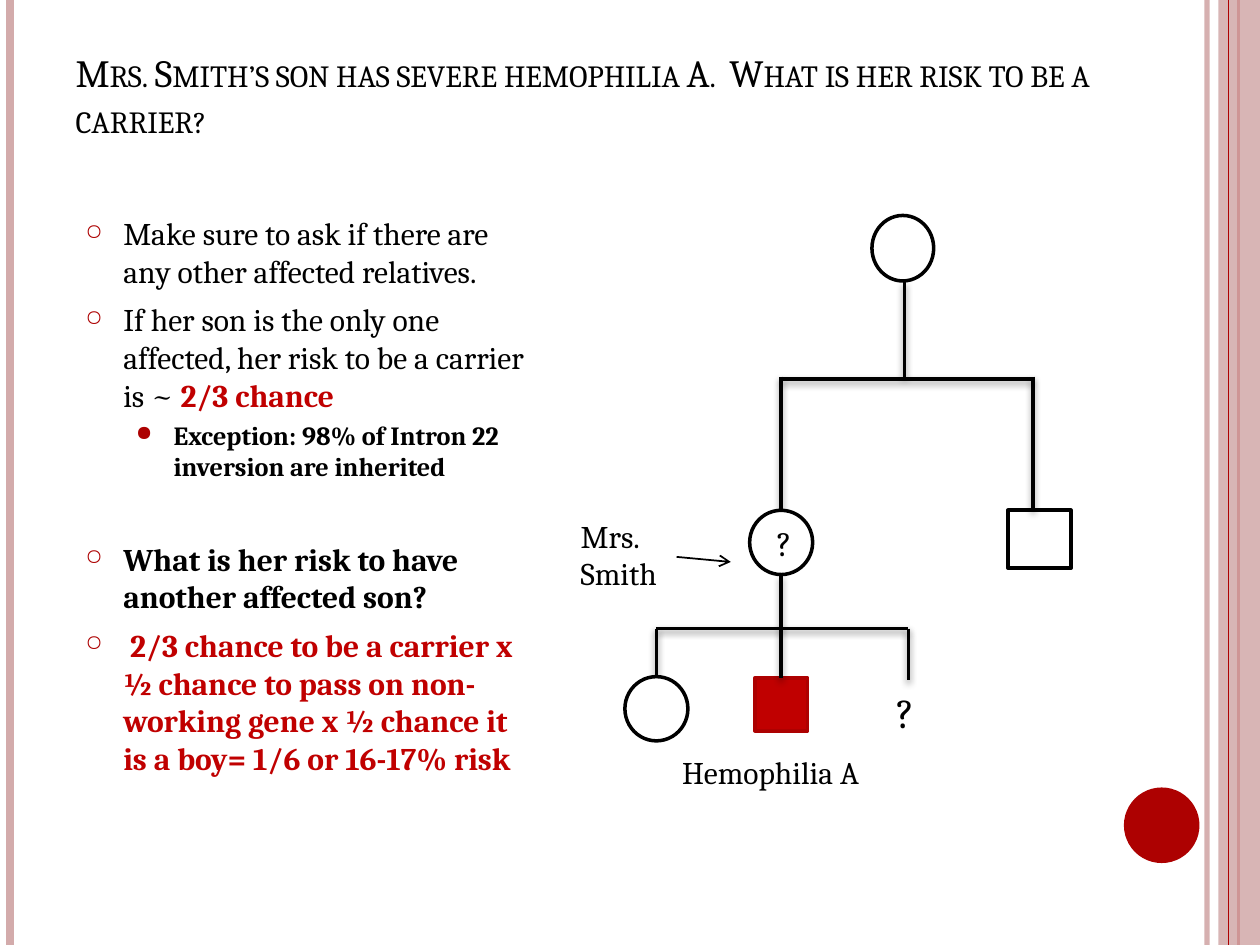
from lxml.etree import SubElement
from pptx import Presentation
from pptx.dml.color import RGBColor
from pptx.enum.shapes import MSO_CONNECTOR, MSO_SHAPE
from pptx.enum.text import MSO_ANCHOR, MSO_AUTO_SIZE, PP_ALIGN
from pptx.oxml.ns import qn
from pptx.util import Inches, Pt

COLORS = {"ink": "000000", "paper": "FFFFFF", "red": "C00000",
          "accent": "AD0101", "rose": "D3ABAB"}
COLUMNS, ROWS = 100, 75


class PedigreeSlide:
    """Draws styled elements on one slide, placed on a 100 by 75 grid."""

    def __init__(self, deck):
        self.font = "Cambria"
        self.column = deck.slide_width / COLUMNS
        self.row = deck.slide_height / ROWS
        self.slide = deck.slides.add_slide(deck.slide_layouts[5])

    def box(self, left, top, width, height):
        return (round(left * self.column), round(top * self.row),
                round(width * self.column), round(height * self.row))

    def color(self, name):
        return RGBColor.from_string(COLORS[name])

    def alpha(self, parent, percent):
        SubElement(parent, qn("a:alpha"), val=str(percent * 1000))

    def style(self, run, size, color="ink", bold=False):
        run.font.name, run.font.size, run.font.bold = self.font, Pt(size), bold
        run.font.color.rgb = self.color(color)

    def title(self, text, area, size):
        title = self.slide.shapes.title
        title.left, title.top, title.width, title.height = self.box(*area)
        frame = title.text_frame
        frame.text = text
        frame.auto_size = MSO_AUTO_SIZE.NONE
        frame.vertical_anchor = MSO_ANCHOR.BOTTOM
        heading = frame.paragraphs[0]
        heading.alignment = PP_ALIGN.LEFT
        self.style(heading.runs[0], size)
        heading.runs[0]._r.get_or_add_rPr().set("cap", "small")

    def text_frame(self, area):
        frame = self.slide.shapes.add_textbox(*self.box(*area)).text_frame
        frame.word_wrap = True
        return frame

    def label(self, text, area, size=18, align=PP_ALIGN.CENTER):
        frame = self.text_frame(area)
        frame.text = text
        frame.paragraphs[0].alignment = align
        self.style(frame.paragraphs[0].runs[0], size)

    def bullet(self, paragraph, symbol, indent, scale):
        properties = paragraph._p.get_or_add_pPr()
        properties.set("marL", str(Inches(indent)))
        properties.set("indent", str(-Inches(0.3)))
        tint = SubElement(properties, qn("a:buClr"))
        SubElement(tint, qn("a:srgbClr"), val=COLORS["accent"])
        SubElement(properties, qn("a:buSzPct"), val=str(scale * 1000))
        SubElement(properties, qn("a:buChar"), char=symbol)

    def bullets(self, area, items):
        frame = self.text_frame(area)
        for index, (level, gap, parts) in enumerate(items):
            paragraph = frame.add_paragraph() if index else frame.paragraphs[0]
            paragraph.level, paragraph.space_before = level, Pt(gap)
            self.bullet(paragraph, *(("○", 0.3, 70), ("●", 0.7, 80))[level])
            for text, color, bold in parts:
                run = paragraph.add_run()
                run.text = text
                self.style(run, (18, 15)[level], color, bold)

    def shape(self, kind, area, fill=None, line=None, opacity=100):
        shape = self.slide.shapes.add_shape(kind, *self.box(*area))
        shape.shadow.inherit = False
        if fill:
            shape.fill.solid()
            shape.fill.fore_color.rgb = self.color(fill)
            if opacity < 100:
                self.alpha(next(shape._element.spPr.iter(qn("a:srgbClr"))), opacity)
        else:
            shape.fill.background()
        if line:
            shape.line.color.rgb = self.color(line)
            shape.line.width = Pt(2)
        else:
            shape.line.fill.background()
        return shape

    def line(self, start, end, color="ink", width=2, opacity=100,
             shadow=False, arrow=False):
        ends = self.box(*start, *end)
        line = self.slide.shapes.add_connector(MSO_CONNECTOR.STRAIGHT, *ends)
        line.line.color.rgb = self.color(color)
        line.line.width = Pt(width)
        properties = line._element.spPr
        if opacity < 100:
            self.alpha(next(properties.iter(qn("a:srgbClr"))), opacity)
        if arrow:
            SubElement(properties.find(qn("a:ln")), qn("a:tailEnd"), type="arrow")
        effects = SubElement(properties, qn("a:effectLst"))
        if shadow:
            cast = SubElement(effects, qn("a:outerShdw"), blurRad=str(Pt(4)),
                              dist=str(Pt(2)), dir="5400000", rotWithShape="0")
            self.alpha(SubElement(cast, qn("a:srgbClr"), val=COLORS["ink"]), 40)
        return line

    def kinship(self, start, end):
        return self.line(start, end, shadow=True)

    def female(self, left, top, width=5, height=5.1):
        self.shape(MSO_SHAPE.OVAL, (left, top, width, height), "paper", "ink")

    def border(self):
        def stripe(x, color, width, opacity=100):
            self.line((x, 0), (x, ROWS), color, width, opacity)

        stripe(95.8, "rose", 3, 93)
        stripe(0.8, "rose", 4.5)
        stripe(98.3, "accent", 1.5)
        self.shape(MSO_SHAPE.RECTANGLE, (96.7, 0, 3.3, ROWS), "rose", opacity=87)
        stripe(97.5, "accent", 0.75)
        self.shape(MSO_SHAPE.OVAL, (89.2, 62.5, 6, 6), "accent")

    def pedigree(self):
        mother, brother, grandmother = 62, 82, 71.8
        daughter, unborn = 52.1, 72.1
        self.kinship((grandmother, 22.4), (grandmother, 29.9))
        self.female(69.2, 17.1, 4.9, 5.2)
        self.kinship((mother, 30.1), (brother, 30.1))
        for child in (brother, mother):
            self.kinship((child, 29.9), (child, 40.5))
        self.female(59.5, 40.5)
        self.label("Mrs. Smith", (45.1, 40.5, 10.8, 7.1), align=PP_ALIGN.LEFT)
        self.line((53.7, 44.2), (58, 44.6), width=1, arrow=True)
        son = self.shape(MSO_SHAPE.RECTANGLE, (59.9, 53.8, 4.2, 4.2), "red", "accent")
        self.label("Hemophilia A", (49.9, 59.3, 22.5, 4))
        self.kinship((mother, 45.6), (mother, 53.8)).end_connect(son, 0)
        self.label("?", (60.3, 40.9, 3.9, 4.4), 20)
        self.shape(MSO_SHAPE.RECTANGLE, (80, 40.5, 5, 4.6), line="ink")
        for child in (daughter, unborn):
            self.kinship((min(child, mother), 49.9), (max(child, mother), 49.9))
            self.kinship((child, 49.9), (child, 54))
        self.female(49.6, 53.7)
        self.label("?", (69.4, 54, 4.9, 5), 24)


def main():
    deck = Presentation()
    deck.slide_width, deck.slide_height = Inches(10), Inches(7.5)
    page = PedigreeSlide(deck)
    page.border()
    page.bullets((5.8, 16.5, 37.5, 52.1), [
        (0, 6, [("Make sure to ask if there are any other affected relatives.",
                 "ink", False)]),
        (0, 6, [("If her son is the only one affected, her risk to be a carrier is ~ ",
                 "ink", False), ("2/3 chance", "red", True)]),
        (1, 3, [("Exception: 98% of Intron 22 inversion are inherited", "ink", True)]),
        (0, 33, [("What is her risk to have another affected son?", "ink", True)]),
        (0, 6, [(" 2/3 chance to be a carrier x ½ chance to pass on non-working "
                 "gene x ½ chance it is a boy= 1/6 or 16-17% risk", "red", True)]),
    ])
    page.title("Mrs. Smith’s son has severe hemophilia A.  What is her risk "
               "to be a carrier?", (5, 3, 89.6, 8.7), 22)
    page.pedigree()
    deck.save("out.pptx")


if __name__ == "__main__":
    main()
